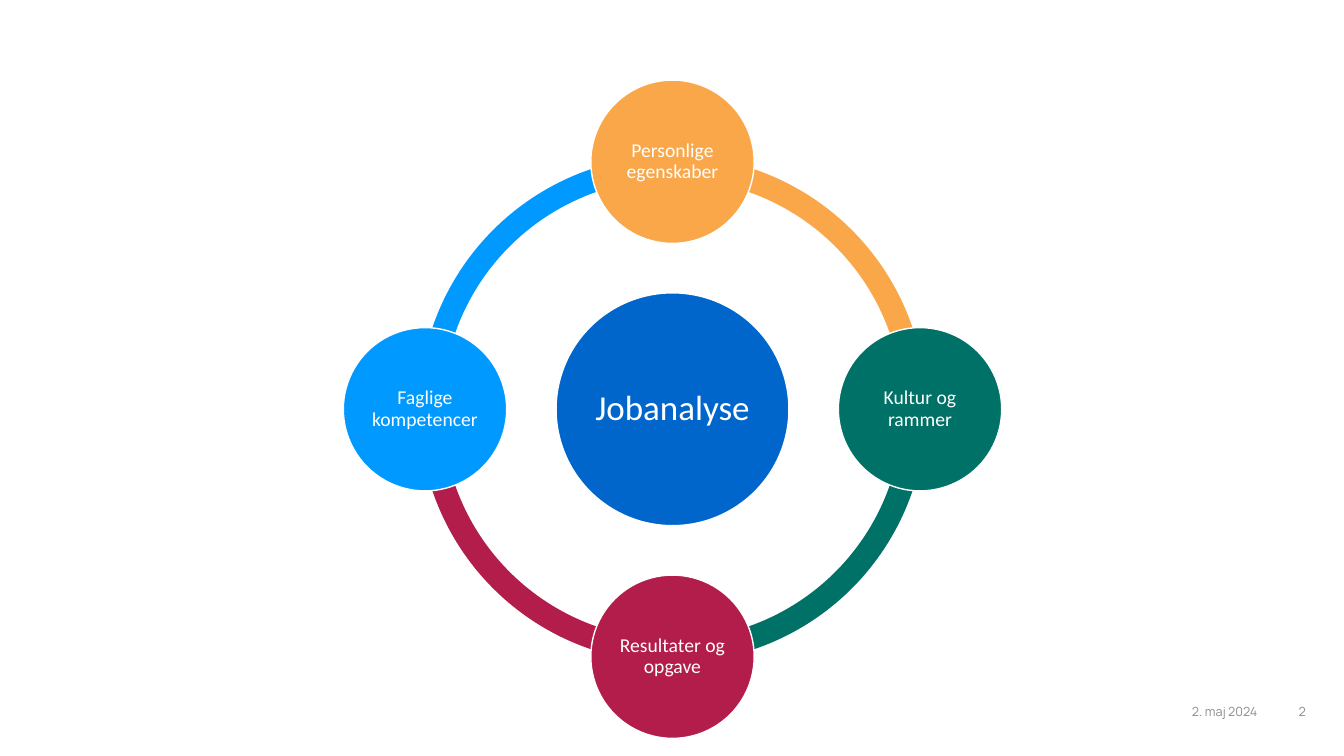
from math import cos, radians, sin

from pptx import Presentation
from pptx import util as u
from pptx.dml.color import RGBColor
from pptx.enum import shapes, text

COLORS = {
    "white": "FFFFFF",
    "grey": "8C8C8C",
    "core": "0066CC",
    "orange": "FAA749",
    "green": "007167",
    "red": "B21D4B",
    "blue": "0099FF",
}
ASPECTS = [
    ("Personlige egenskaber", "orange"),
    ("Kultur og rammer", "green"),
    ("Resultater og opgave", "red"),
    ("Faglige kompetencer", "blue"),
]
CENTER_X, CENTER_Y = 6.67, 4.06
ORBIT = 2.455
RING_DIAMETER = 5.03
RING_THICKNESS = 0.046
ADJUSTMENT_PER_DEGREE = 0.6


def rgb(color):
    return RGBColor.from_string(COLORS[color])


def style_text(frame, words, font_name, size, color, align):
    frame.word_wrap = True
    frame.vertical_anchor = text.MSO_ANCHOR.MIDDLE
    paragraph = frame.paragraphs[0]
    paragraph.text = words
    paragraph.alignment = align
    paragraph.font.name = font_name
    paragraph.font.size = u.Pt(size)
    paragraph.font.color.rgb = rgb(color)
    return paragraph


def add_centered(slide, kind, x, y, diameter, color):
    figure = slide.shapes.add_shape(
        kind, u.Inches(x - diameter / 2), u.Inches(y - diameter / 2),
        u.Inches(diameter), u.Inches(diameter))
    figure.shadow.inherit = False
    figure.fill.solid()
    figure.fill.fore_color.rgb = rgb(color)
    return figure


def add_arc(slide, start, color):
    arc = add_centered(slide, shapes.MSO_SHAPE.BLOCK_ARC,
                       CENTER_X, CENTER_Y, RING_DIAMETER, color)
    arc.line.fill.background()
    arc.adjustments[0] = start * ADJUSTMENT_PER_DEGREE
    arc.adjustments[1] = (start + 90) % 360 * ADJUSTMENT_PER_DEGREE
    arc.adjustments[2] = RING_THICKNESS


def add_circle(slide, x, y, diameter, color, words, size, inset):
    circle = add_centered(slide, shapes.MSO_SHAPE.OVAL, x, y, diameter, color)
    circle.line.color.rgb = rgb("white")
    circle.line.width = u.Pt(1)
    frame = circle.text_frame
    frame.margin_left = frame.margin_right = u.Inches(inset)
    frame.margin_top = frame.margin_bottom = u.Inches(inset)
    label = style_text(frame, words, "Calibri", size, "white",
                       text.PP_ALIGN.CENTER)
    label.line_spacing = 0.9


def add_footer(slide, left, width, words, left_inset=0.1):
    footer = slide.shapes.add_textbox(
        u.Inches(left), u.Inches(6.86), u.Inches(width), u.Inches(0.4))
    footer.text_frame.margin_left = u.Inches(left_inset)
    style_text(footer.text_frame, words, "Manrope", 9, "grey",
               text.PP_ALIGN.RIGHT)


def main():
    deck = Presentation()
    deck.slide_width, deck.slide_height = u.Inches(13.33), u.Inches(7.5)
    slide = deck.slides.add_slide(deck.slide_layouts[6])

    add_footer(slide, 11.31, 1.26, "2. maj 2024")
    add_footer(slide, 12.59, 0.46, "2", left_inset=0)

    angles = [(270 + 90 * i) % 360 for i in range(len(ASPECTS))]
    for angle, (_, color) in zip(angles, ASPECTS):
        add_arc(slide, angle, color)

    add_circle(slide, CENTER_X, CENTER_Y, 2.31, "core", "Jobanalyse", 25, 0.03)
    for angle, (words, color) in zip(angles, ASPECTS):
        x = CENTER_X + ORBIT * cos(radians(angle))
        y = CENTER_Y + ORBIT * sin(radians(angle))
        add_circle(slide, x, y, 1.62, color, words, 14, 0.02)

    deck.save("out.pptx")


if __name__ == "__main__":
    main()
